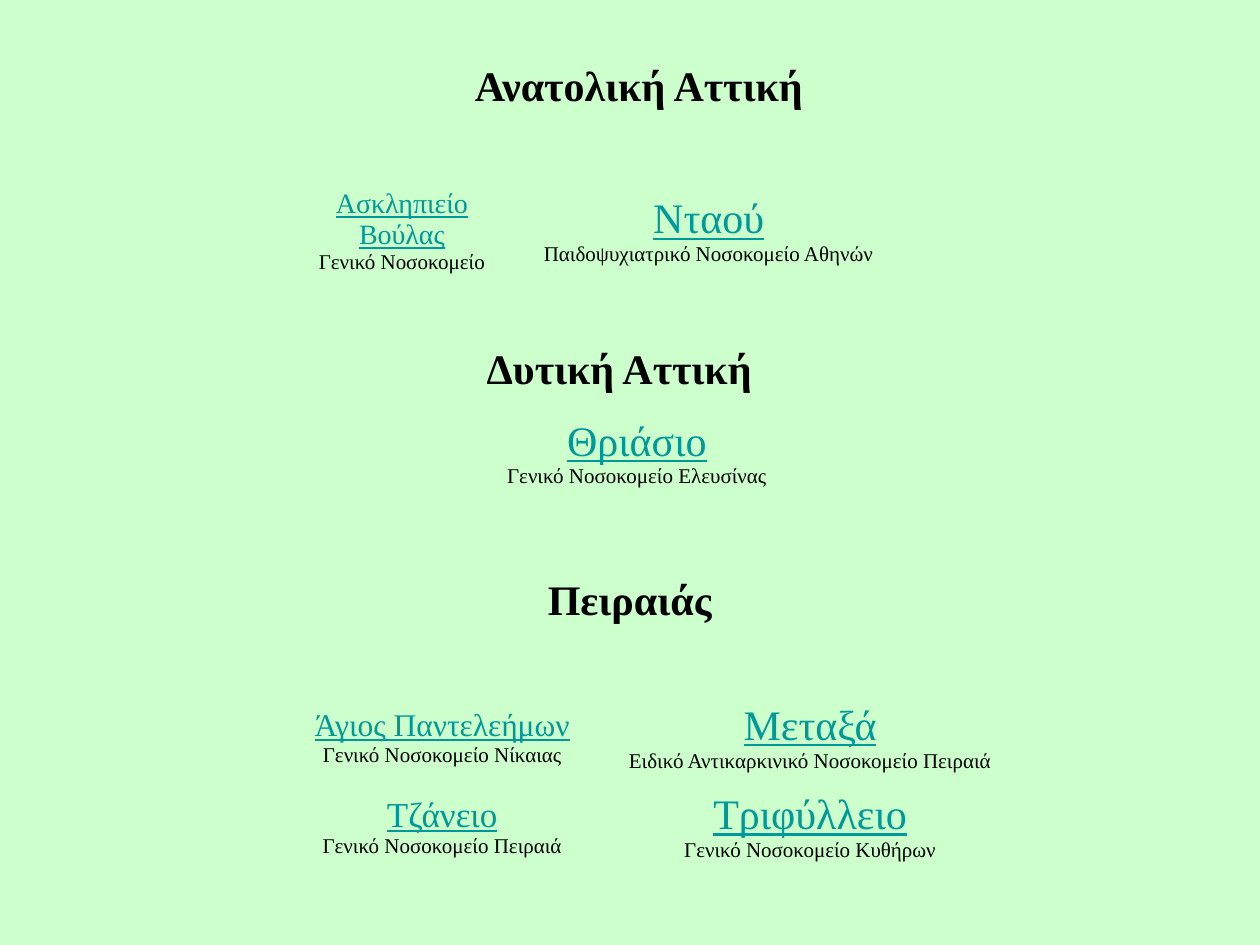
from dataclasses import dataclass

from pptx import Presentation
from pptx.dml.color import RGBColor
from pptx.enum.text import MSO_ANCHOR, PP_ALIGN
from pptx.util import Inches, Pt

LEFT, CENTER = PP_ALIGN.LEFT, PP_ALIGN.CENTER
TOP, MIDDLE = MSO_ANCHOR.TOP, MSO_ANCHOR.MIDDLE
NO_STYLE_NO_GRID = "{2D5ABB26-0587-4C30-8999-92F81FD0307C}"


@dataclass(frozen=True)
class Theme:
    background: RGBColor = RGBColor(0xCC, 0xFF, 0xCC)
    ink: RGBColor = RGBColor(0, 0, 0)
    name: RGBColor = RGBColor(0, 0x99, 0x99)
    font: str = "Times New Roman"
    heading_size: int = 24
    detail_size: int = 12


theme = Theme()


def add_span(para, text, size, color, **formats):
    span = para.add_run()
    span.text = text
    span.font.color.rgb = color
    values = {"name": theme.font, "size": Pt(size), **formats}
    for attribute, value in values.items():
        setattr(span.font, attribute, value)


deck = Presentation()
deck.slide_width, deck.slide_height = Inches(10), Inches(7.5)
page = deck.slides.add_slide(deck.slide_layouts[6])
page.background.fill.solid()
page.background.fill.fore_color.rgb = theme.background

# Region headings: text, left, top, width, alignment
headings = [
    ("Ανατολική Αττική", 3.67, 0.42, 2.85, LEFT),
    ("Δυτική Αττική", 3.75, 2.67, 2.33, CENTER),
    ("Πειραιάς", 4.25, 4.5, 1.67, LEFT),
]
for text, left, top, width, alignment in headings:
    box = page.shapes.add_textbox(Inches(left), Inches(top), Inches(width), Inches(0.8))
    frame = box.text_frame
    frame.word_wrap = False
    frame.vertical_anchor = TOP
    para = frame.paragraphs[0]
    para.alignment = alignment
    add_span(para, text, theme.heading_size, theme.ink, bold=True)

# Hospital tables: left, top, column widths, row height,
# rows of (name, name size, description)
tables = [
    (2.33, 1.42, [1.72, 3.15], 0.83, [
        [("Ασκληπιείο Βούλας", 16, "Γενικό Νοσοκομείο"),
         ("Νταού", 24, "Παιδοψυχιατρικό Νοσοκομείο Αθηνών")],
    ]),
    (3.92, 3.25, [2.27], 0.7, [
        [("Θριάσιο", 24, "Γενικό Νοσοκομείο Ελευσίνας")],
    ]),
    (2.33, 5.5, [2.36, 3.48], 0.71, [
        [("Άγιος Παντελεήμων", 18, "Γενικό Νοσοκομείο Νίκαιας"),
         ("Μεταξά", 24, "Ειδικό Αντικαρκινικό Νοσοκομείο Πειραιά")],
        [("Τζάνειο", 20, "Γενικό Νοσοκομείο Πειραιά"),
         ("Τριφύλλειο", 24, "Γενικό Νοσοκομείο Κυθήρων")],
    ]),
]
for left, top, widths, row_height, rows in tables:
    graphic = page.shapes.add_table(
        len(rows), len(widths), Inches(left), Inches(top),
        Inches(sum(widths)), Inches(row_height * len(rows)))
    table = graphic.table
    table.first_row = table.horz_banding = False
    graphic._element.graphic.graphicData.tbl.tblPr[0].text = NO_STYLE_NO_GRID
    for column, width in zip(table.columns, widths):
        column.width = Inches(width)
    for row, hospitals in zip(table.rows, rows):
        row.height = Inches(row_height)
        for cell, (name, name_size, description) in zip(row.cells, hospitals):
            cell.fill.background()
            cell.vertical_anchor = MIDDLE
            para = cell.text_frame.paragraphs[0]
            para.alignment = CENTER
            add_span(para, name, name_size, theme.name, underline=True)
            para.add_line_break()
            add_span(para, description, theme.detail_size, theme.ink)

deck.save("out.pptx")
